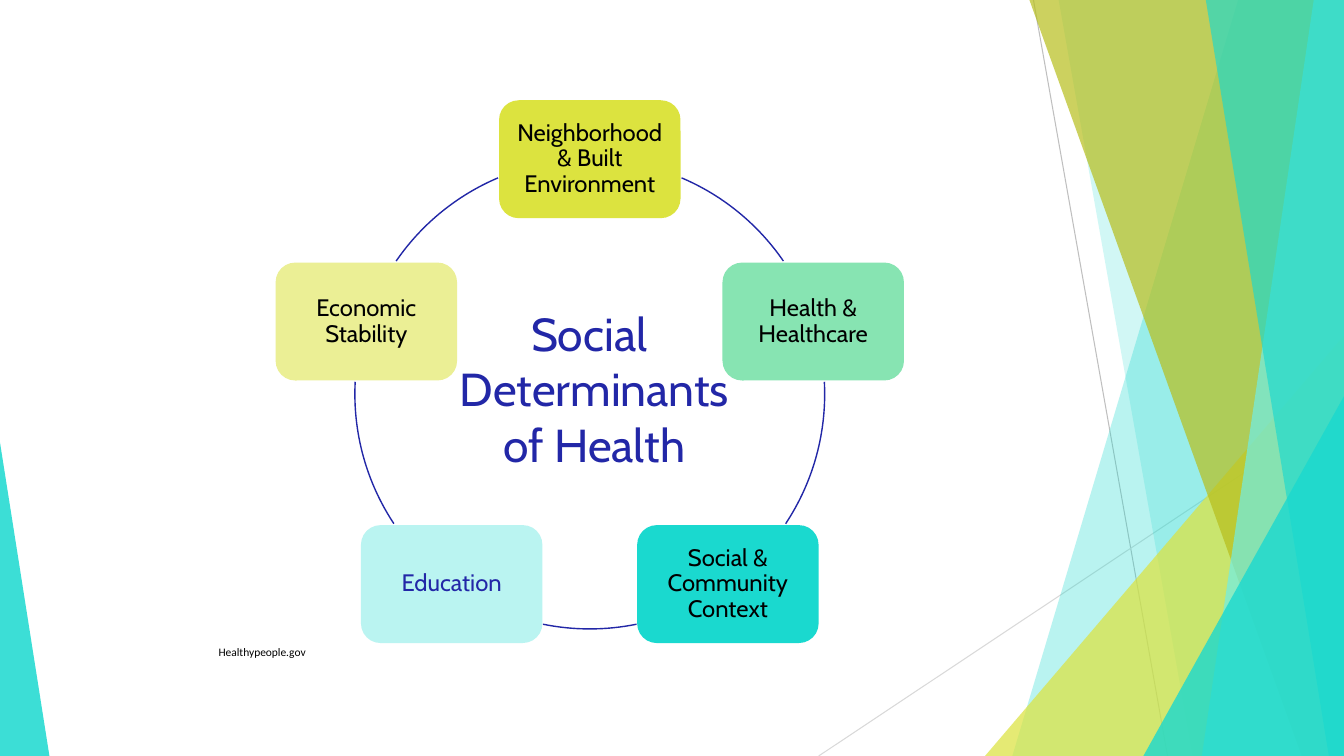
from dataclasses import dataclass
from math import cos, radians, sin

from lxml import etree
from pptx import Presentation
from pptx.dml.color import RGBColor
from pptx.enum.shapes import MSO_CONNECTOR, MSO_SHAPE
from pptx.enum.text import MSO_ANCHOR, PP_ALIGN
from pptx.oxml.ns import qn
from pptx.shapes.autoshape import Shape
from pptx.slide import Slide
from pptx.text.text import TextFrame
from pptx.util import Emu, Pt

PX = 9144  # 100 px to the inch
SLIDE_WIDTH, SLIDE_HEIGHT = 1333, 750

TURQUOISE = RGBColor(0x1A, 0xD9, 0xCF)
LIGHT_TURQUOISE = RGBColor(0x70, 0xEE, 0xE7)
PALE_TURQUOISE = RGBColor(0xBA, 0xF4, 0xF1)
LIME = RGBColor(0xDC, 0xE3, 0x3F)
PALE_LIME = RGBColor(0xEB, 0xEF, 0x95)
OLIVE = RGBColor(0xB7, 0xBE, 0x1C)
MINT = RGBColor(0x87, 0xE4, 0xB2)
NAVY = RGBColor(0x22, 0x27, 0xA7)
BLACK = RGBColor(0, 0, 0)
GRAY = RGBColor(0xBF, 0xBF, 0xBF)
LIGHT_GRAY = RGBColor(0xD9, 0xD9, 0xD9)

RING_X, RING_Y, RING_RADIUS = 585, 391, 233
NODE_WIDTH, NODE_HEIGHT = 180, 117


@dataclass
class Ray:
    start: tuple[int, int]
    end: tuple[int, int]
    color: RGBColor


@dataclass
class Band:
    """A facet reaching the right edge, with a slanted left side."""
    top_x: int
    bottom_x: int
    color: RGBColor
    opacity: int


@dataclass
class Corner:
    """A right triangle standing on the bottom edge."""
    left: int
    top: int
    width: int
    apex: int
    color: RGBColor
    opacity: int


@dataclass
class Node:
    label: str
    fill: RGBColor
    text_color: RGBColor = BLACK


@dataclass
class Arc:
    start: float
    end: float


RAYS = [
    Ray((1025, 0), (1158, 750), GRAY),
    Ray((1333, 403), (812, 750), LIGHT_GRAY),
]
FACETS = [
    Band(1228, 1004, TURQUOISE, 30),
    Band(1050, 1183, TURQUOISE, 20),
    Corner(977, 333, 356, 1, LIME, 72),
    Band(1021, 1291, OLIVE, 70),
    Band(1303, 1192, LIGHT_TURQUOISE, 70),
    Band(1196, 1318, TURQUOISE, 65),
    Corner(1134, 393, 199, 1, TURQUOISE, 80),
    Corner(0, 439, 49, 0, TURQUOISE, 85),
]
NODES = [
    Node("Neighborhood & Built Environment", LIME),
    Node("Health & Healthcare", MINT),
    Node("Social & Community Context", TURQUOISE),
    Node("Education", PALE_TURQUOISE, NAVY),
    Node("Economic Stability", PALE_LIME),
]
ARCS = [
    Arc(293, 325.5), Arc(357, 33.5), Arc(78.5, 101.5),
    Arc(146.5, 183), Arc(214.5, 247),
]


def px(*lengths: float) -> list[Emu]:
    return [Emu(round(length * PX)) for length in lengths]


def paint(shape: Shape, color: RGBColor, opacity: int = 100) -> None:
    shape.shadow.inherit = False
    shape.line.fill.background()
    shape.fill.solid()
    shape.fill.fore_color.rgb = color
    if opacity < 100:
        color_element = shape.fill._xPr.find(qn("a:solidFill"))[0]
        etree.SubElement(color_element, qn("a:alpha"), val=str(opacity * 1000))


def draw_ray(slide: Slide, ray: Ray) -> None:
    connector = slide.shapes.add_connector(
        MSO_CONNECTOR.STRAIGHT, *px(*ray.start, *ray.end))
    connector.line.color.rgb = ray.color
    connector.line.width = Pt(0.75)
    etree.SubElement(connector._element.spPr, qn("a:effectLst"))


def draw_facet(slide: Slide, facet: Band | Corner) -> None:
    if isinstance(facet, Band):
        builder = slide.shapes.build_freeform(facet.top_x, 0, scale=PX)
        builder.add_line_segments([
            (SLIDE_WIDTH, 0), (SLIDE_WIDTH, SLIDE_HEIGHT),
            (facet.bottom_x, SLIDE_HEIGHT)])
        shape = builder.convert_to_shape()
    else:
        shape = slide.shapes.add_shape(
            MSO_SHAPE.ISOSCELES_TRIANGLE,
            *px(facet.left, facet.top, facet.width, SLIDE_HEIGHT - facet.top))
        shape.adjustments[0] = facet.apex
    paint(shape, facet.color, facet.opacity)


def write(frame: TextFrame, lines: list[str], font: str, size: float,
          color: RGBColor, alignment: PP_ALIGN) -> None:
    paragraph = frame.paragraphs[0]
    paragraph.alignment = alignment
    for index, line in enumerate(lines):
        if index:
            paragraph.add_line_break()
        run = paragraph.add_run()
        run.text = line
        run.font.name = font
        run.font.size = Pt(size)
        run.font.color.rgb = color


def draw_node(slide: Slide, node: Node, angle: float) -> None:
    left = RING_X + RING_RADIUS * cos(radians(angle)) - NODE_WIDTH / 2
    top = RING_Y + RING_RADIUS * sin(radians(angle)) - NODE_HEIGHT / 2
    shape = slide.shapes.add_shape(
        MSO_SHAPE.ROUNDED_RECTANGLE, *px(left, top, NODE_WIDTH, NODE_HEIGHT))
    paint(shape, node.fill)
    frame = shape.text_frame
    frame.word_wrap = True
    frame.vertical_anchor = MSO_ANCHOR.MIDDLE
    # The rounded corners already inset the text area by about 6 px.
    frame.margin_left = frame.margin_right = Emu(7 * PX)
    frame.margin_top = frame.margin_bottom = Emu(7 * PX)
    write(frame, [node.label], "Cabin", 17, node.text_color, PP_ALIGN.CENTER)
    frame.paragraphs[0].line_spacing = 0.9


def draw_arc(slide: Slide, arc: Arc) -> None:
    shape = slide.shapes.add_shape(
        MSO_SHAPE.ARC, *px(RING_X - RING_RADIUS, RING_Y - RING_RADIUS,
                           2 * RING_RADIUS, 2 * RING_RADIUS))
    # Angles are stored in 1/60000 degree, adjustments in 1/100000.
    shape.adjustments[0] = arc.start * 0.6
    shape.adjustments[1] = arc.end * 0.6
    shape.shadow.inherit = False
    shape.fill.background()
    shape.line.color.rgb = NAVY
    shape.line.width = Pt(1)


def main() -> None:
    presentation = Presentation()
    presentation.slide_width, presentation.slide_height = px(
        SLIDE_WIDTH, SLIDE_HEIGHT)
    slide = presentation.slides.add_slide(presentation.slide_layouts[6])

    for ray in RAYS:
        draw_ray(slide, ray)
    for facet in FACETS:
        draw_facet(slide, facet)
    for index, (node, arc) in enumerate(zip(NODES, ARCS)):
        draw_node(slide, node, -90 + index * 360 / len(NODES))
        draw_arc(slide, arc)

    title = slide.shapes.add_textbox(*px(237, 298, 705, 116)).text_frame
    title.word_wrap = True
    write(title, ["Social ", "Determinants", "of Health"],
          "Cabin", 33, NAVY, PP_ALIGN.CENTER)

    source = slide.shapes.add_textbox(*px(207, 635, 109, 24)).text_frame
    source.word_wrap = False
    write(source, ["Healthypeople.gov"], "Calibri", 8.2, BLACK, PP_ALIGN.LEFT)

    presentation.save("out.pptx")


if __name__ == "__main__":
    main()
